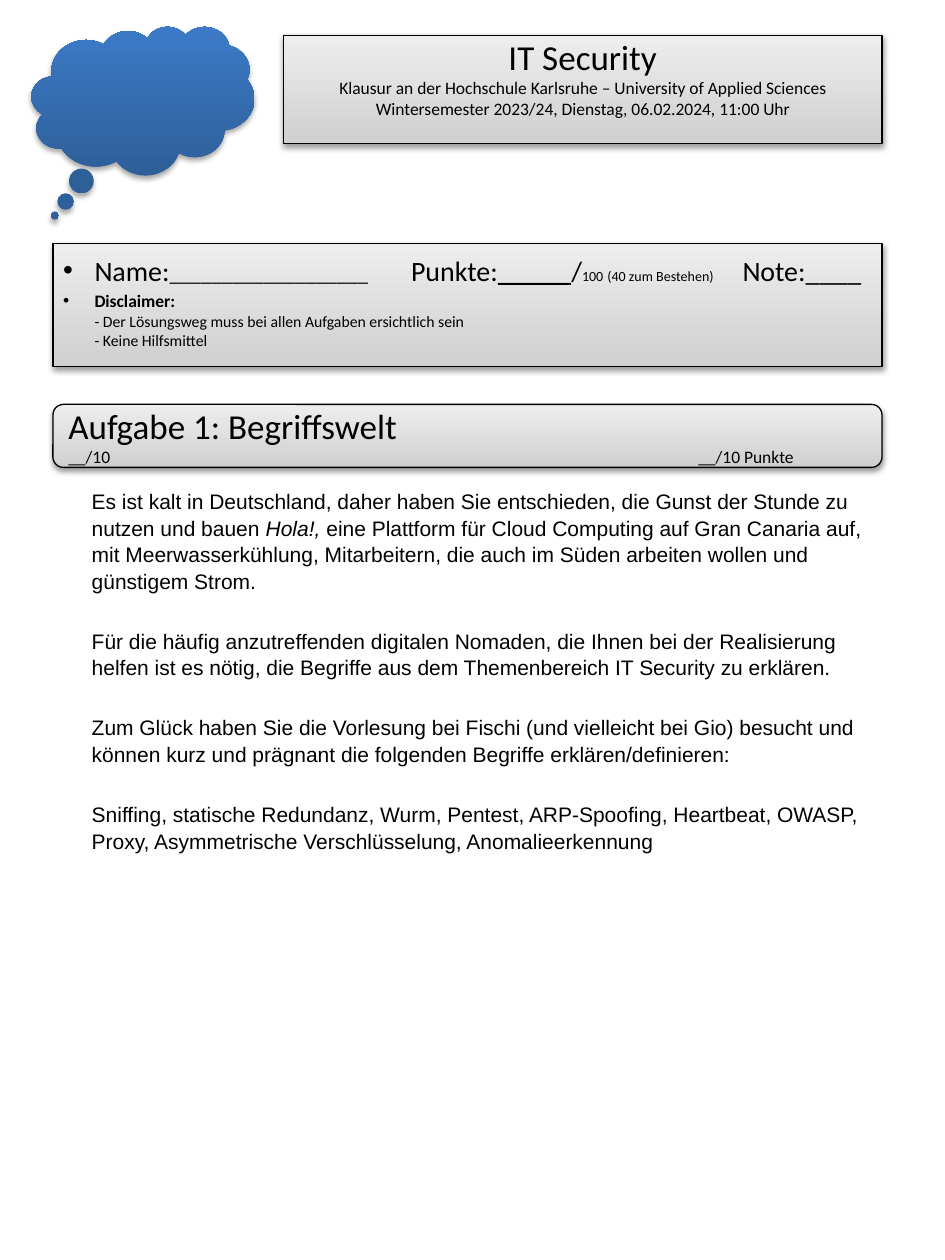
"""Builds the first page of an IT Security exam."""
from lxml.etree import SubElement
from pptx import Presentation
from pptx.dml.color import RGBColor
from pptx.enum.shapes import MSO_SHAPE
from pptx.enum.text import MSO_ANCHOR, MSO_AUTO_SIZE, PP_ALIGN
from pptx.oxml.ns import qn
from pptx.util import Pt

BLACK = "000000"
GREY = ("D0D0D0", "EDEDED")
BLUE = ("2E5F99", "3C7AC7")
LEFT, RIGHT = 30.24, 504
PANEL_WIDTH = RIGHT - LEFT
HANGING = 18
POINTS_TAB = 360

HEADING = [
    ("IT Security\n", 20, {}),
    ("Klausur an der Hochschule Karlsruhe – University of Applied Sciences\n"
     "Wintersemester 2023/24, Dienstag, 06.02.2024, 11:00 Uhr", 10, {}),
]
STUDENT = [
    [
        ("Name:", 16, {}),
        ("___________________", 12, {}),
        (" ", 12, {"gap": 21.7}),
        ("Punkte:", 16, {}),
        ("______", 14, {"underline": True}),
        ("/", 16, {}),
        ("100", 8, {}),
        (" ", 10, {}),
        ("(40 zum Bestehen)", 8, {}),
        (" ", 8, {"gap": 14.5}),
        ("Note:____", 16, {}),
    ],
    [
        ("Disclaimer:\n", 10, {"bold": True}),
        ("- Der Lösungsweg muss bei allen Aufgaben ersichtlich sein\n"
         "- Keine Hilfsmittel", 9, {}),
    ],
]
TASK = [
    [("Aufgabe 1: Begriffswelt", 20, {})],
    [("__/10\t__/10 Punkte", 10, {})],
]
STORY = [
    [
        ("Es ist kalt in Deutschland, daher haben Sie entschieden, die Gunst der "
         "Stunde zu nutzen und bauen ", 12, {}),
        ("Hola!,", 12, {"italic": True}),
        (" eine Plattform für Cloud Computing auf Gran Canaria auf, mit "
         "Meerwasserkühlung, Mitarbeitern, die auch im Süden arbeiten wollen und "
         "günstigem Strom.", 12, {}),
    ],
    [("Für die häufig anzutreffenden digitalen Nomaden, die Ihnen bei der "
      "Realisierung helfen ist es nötig, die Begriffe aus dem Themenbereich "
      "IT Security zu erklären.", 12, {})],
    [("Zum Glück haben Sie die Vorlesung bei Fischi (und vielleicht bei Gio) "
      "besucht und können kurz und prägnant die folgenden Begriffe "
      "erklären/definieren:", 12, {})],
    [("Sniffing, statische Redundanz, Wurm, Pentest, ARP-Spoofing, Heartbeat, "
      "OWASP, Proxy, Asymmetrische Verschlüsselung, Anomalieerkennung", 12, {})],
]


def color(value):
    return RGBColor.from_string(value)


def style_panel(shape, stops, line=None, opacity=38, distance=1.6):
    shape.fill.gradient()
    shape.fill.gradient_angle = 90
    for stop, value in zip(shape.fill.gradient_stops, stops):
        stop.color.rgb = color(value)
    if line:
        shape.line.color.rgb = color(line)
        shape.line.width = Pt(0.75)
    else:
        shape.line.fill.background()
    shape.shadow.inherit = False
    effects = shape._element.spPr.find(qn("a:effectLst"))
    shadow = SubElement(effects, qn("a:outerShdw"), blurRad=str(Pt(3.1)),
                        dist=str(Pt(distance)), dir="5400000", rotWithShape="0")
    tint = SubElement(shadow, qn("a:srgbClr"), val=BLACK)
    SubElement(tint, qn("a:alpha"), val=str(opacity * 1000))


def add_panel(page, kind, left, top, width, height):
    return page.shapes.add_shape(kind, Pt(left), Pt(top), Pt(width), Pt(height))


def add_bullet(para):
    props = para._p.get_or_add_pPr()
    props.set("marL", str(Pt(HANGING)))
    props.set("indent", str(-Pt(HANGING)))
    SubElement(props, qn("a:buFont"), typeface="Arial")
    SubElement(props, qn("a:buChar"), char="•")


def add_tab(para, position):
    tabs = SubElement(para._p.get_or_add_pPr(), qn("a:tabLst"))
    SubElement(tabs, qn("a:tab"), pos=str(Pt(position)), algn="l")


def add_span(para, text, size, look):
    for index, piece in enumerate(text.split("\n")):
        if index:
            para.add_line_break()
        if not piece:
            continue
        span = para.add_run()
        span.text = piece
        span.font.size = Pt(size)
        for name in ("bold", "italic", "underline"):
            if name in look:
                setattr(span.font, name, look[name])
        if "gap" in look:
            span._r.get_or_add_rPr().set("spc", str(round(look["gap"] * 100)))


def write(shape, paragraphs, insets, anchor=MSO_ANCHOR.TOP, font="Calibri",
          align=PP_ALIGN.LEFT, before=0, spacing=None, bullets=False, tab=None):
    frame = shape.text_frame
    frame.word_wrap = True
    frame.auto_size = MSO_AUTO_SIZE.NONE
    frame.vertical_anchor = anchor
    (frame.margin_left, frame.margin_top,
     frame.margin_right, frame.margin_bottom) = map(Pt, insets)
    for index, spans in enumerate(paragraphs):
        para = frame.add_paragraph() if index else frame.paragraphs[0]
        if bullets:
            add_bullet(para)
        if tab and "\t" in spans[0][0]:
            add_tab(para, tab)
        para.alignment = align
        if index:
            para.space_before = Pt(before)
        if spacing:
            para.line_spacing = spacing
        para.font.name = font
        para.font.size = Pt(min(size for _, size, _ in spans))
        para.font.color.rgb = color(BLACK)
        for text, size, look in spans:
            add_span(para, text, size, look)


def main():
    deck = Presentation()
    deck.slide_width, deck.slide_height = Pt(540), Pt(720)
    page = deck.slides.add_slide(deck.slide_layouts[5])

    title = page.shapes.title
    title.left, title.top = Pt(162), Pt(20.16)
    title.width, title.height = Pt(RIGHT - 162), Pt(61.92)
    style_panel(title, GREY, BLACK)
    write(title, [HEADING], (0, 0, 0, 0), align=PP_ALIGN.CENTER)

    cloud = add_panel(page, MSO_SHAPE.CLOUD_CALLOUT, 18, 15.12, 127.44, 84.96)
    cloud.adjustments[0], cloud.adjustments[1] = -0.395, 0.772
    style_panel(cloud, BLUE, opacity=35, distance=1.8)

    student = add_panel(page, MSO_SHAPE.RECTANGLE, LEFT, 138.96, PANEL_WIDTH, 70.56)
    style_panel(student, GREY, BLACK)
    write(student, STUDENT, (5.76, 5.76, 0, 0), before=2, bullets=True)

    task = add_panel(page, MSO_SHAPE.ROUNDED_RECTANGLE, LEFT, 231.12, PANEL_WIDTH, 36)
    style_panel(task, GREY, BLACK)
    write(task, TASK, (7.2, 3.6, 7.2, 3.6), MSO_ANCHOR.MIDDLE, tab=POINTS_TAB)

    story = page.shapes.add_textbox(Pt(45.36), Pt(275.04), Pt(RIGHT - 45.36), Pt(208.08))
    write(story, STORY, (7.2, 3.6, 7.2, 3.6), font="Arial", before=19.3, spacing=1.05)

    deck.save("out.pptx")


if __name__ == "__main__":
    main()
